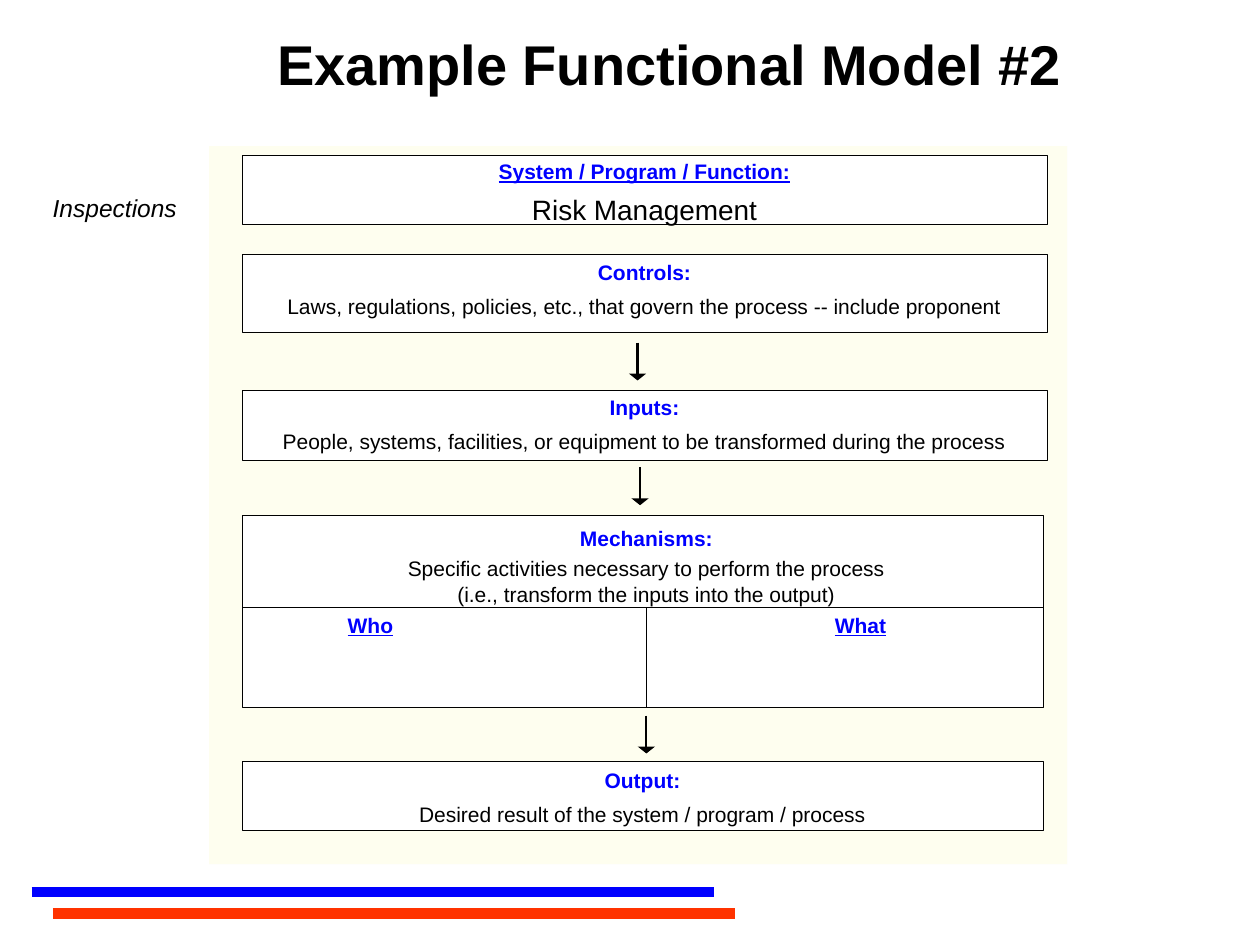
from lxml import etree
from pptx import Presentation
from pptx.dml.color import RGBColor
from pptx.enum.shapes import MSO_CONNECTOR, MSO_SHAPE
from pptx.enum.text import MSO_ANCHOR, MSO_AUTO_SIZE, PP_ALIGN
from pptx.oxml.ns import qn
from pptx.util import Pt

RECT = MSO_SHAPE.RECTANGLE
LINE = MSO_CONNECTOR.STRAIGHT
TOP, MID = MSO_ANCHOR.TOP, MSO_ANCHOR.MIDDLE
LEFT, MIDDLE = PP_ALIGN.LEFT, PP_ALIGN.CENTER
FIXED = MSO_AUTO_SIZE.NONE

PX = 9144  # 100 px to the inch
INK = {"black": "000000", "white": "FFFFFF", "cream": "FEFEEF",
       "blue": "0000FF", "red": "FF3300"}
LOOK = {
    "title": {"size": Pt(32), "bold": True},
    "side": {"size": Pt(14), "italic": True},
    "name": {"size": Pt(16), "bold": False},
    "body": {"size": Pt(12), "bold": False},
    "head": {"size": Pt(12), "bold": True},
    "under": {"size": Pt(12), "bold": True, "underline": True},
}


def write(frame, rows, align=MIDDLE, anchor=TOP):
    """Fill a frame with rows of (text, look, points before)."""
    form = {"word_wrap": True, "auto_size": FIXED, "vertical_anchor": anchor}
    for key, value in form.items():
        setattr(frame, key, value)
    for i, (text, look, gap) in enumerate(rows):
        para = frame.add_paragraph() if i else frame.paragraphs[0]
        para.alignment = align
        para.space_before = Pt(gap)
        run = para.add_run()
        run.text = text
        run.font.name = "Arial"
        tint = "blue" if look in ("head", "under") else "black"
        run.font.color.rgb = RGBColor.from_string(INK[tint])
        for key, value in LOOK[look].items():
            setattr(run.font, key, value)


def rule(x1, y1, x2, y2, tint, width):
    """Draw a straight line without a shadow."""
    line = slide.shapes.add_connector(LINE, x1 * PX, y1 * PX, x2 * PX, y2 * PX)
    line.line.color.rgb = RGBColor.from_string(INK[tint])
    line.line.width = Pt(width)
    etree.SubElement(line._element.spPr, qn("a:effectLst"))
    return line


deck = Presentation()
deck.slide_width, deck.slide_height = 1000 * PX, 750 * PX
slide = deck.slides.add_slide(deck.slide_layouts[5])

# Footer bars
rule(25, 708, 567, 708, "blue", 6)
rule(42, 725, 583, 725, "red", 6)

# Title
title = slide.shapes.title
title.left, title.top, title.width, title.height = [
    n * PX for n in (208, 18, 647, 64)]
write(title.text_frame, [("Example Functional Model #2", "title", 0)],
      anchor=MID)

# Panel behind the model
panel = slide.shapes.add_shape(RECT, 166 * PX, 116 * PX, 681 * PX, 570 * PX)
panel.shadow.inherit = False
panel.fill.solid()
panel.fill.fore_color.rgb = RGBColor.from_string(INK["cream"])
panel.line.fill.background()

# Boxes: left, top, width, height, left inset, top inset, rows
boxes = [
    (192, 123, 639, 55, 10, 3,
     [("System / Program / Function:", "under", 0),
      ("Risk Management", "name", 5)]),
    (192, 202, 639, 62, 10, 4,
     [("Controls:", "head", 0),
      ("Laws, regulations, policies, etc., that govern the process"
       " -- include proponent", "body", 5)]),
    (192, 310, 639, 55, 10, 3,
     [("Inputs:", "head", 0),
      ("People, systems, facilities, or equipment to be transformed"
       " during the process", "body", 5)]),
    (192, 409, 636, 132, 16, 8,
     [("Mechanisms:", "head", 0),
      ("Specific activities necessary to perform the process", "body", 3),
      ("(i.e., transform the inputs into the output)", "body", 0)]),
    (192, 482, 321, 79, 10, 5, []),
    (513, 482, 315, 79, 10, 5, []),
    (192, 604, 636, 55, 10, 5,
     [("Output:", "head", 0),
      ("Desired result of the system / program / process", "body", 5)]),
]
for x, y, w, h, side, top, rows in boxes:
    box = slide.shapes.add_shape(RECT, x * PX, y * PX, w * PX, h * PX)
    box.shadow.inherit = False
    box.fill.solid()
    box.fill.fore_color.rgb = RGBColor.from_string(INK["white"])
    box.line.color.rgb = RGBColor.from_string(INK["black"])
    box.line.width = Pt(0.38)
    frame = box.text_frame
    frame.margin_left, frame.margin_top = side * PX, top * PX
    frame.margin_bottom = 0
    write(frame, rows)

# Labels: left, top, width, height, text, look, alignment
labels = [
    (32, 148, 126, 50, "Inspections", "side", LEFT),
    (244, 481, 100, 30, "Who", "under", MIDDLE),
    (633, 481, 100, 30, "What", "under", MIDDLE),
]
for x, y, w, h, text, look, align in labels:
    label = slide.shapes.add_textbox(x * PX, y * PX, w * PX, h * PX)
    write(label.text_frame, [(text, look, 0)], align)

# Arrows between the boxes
for x, y in ((506, 272), (508, 371), (513, 568)):
    arrow = rule(x, y, x, y + 30, "black", 1.25)
    etree.SubElement(arrow.line._get_or_add_ln(), qn("a:tailEnd"),
                     type="triangle", w="lg", len="sm")

deck.save("out.pptx")
